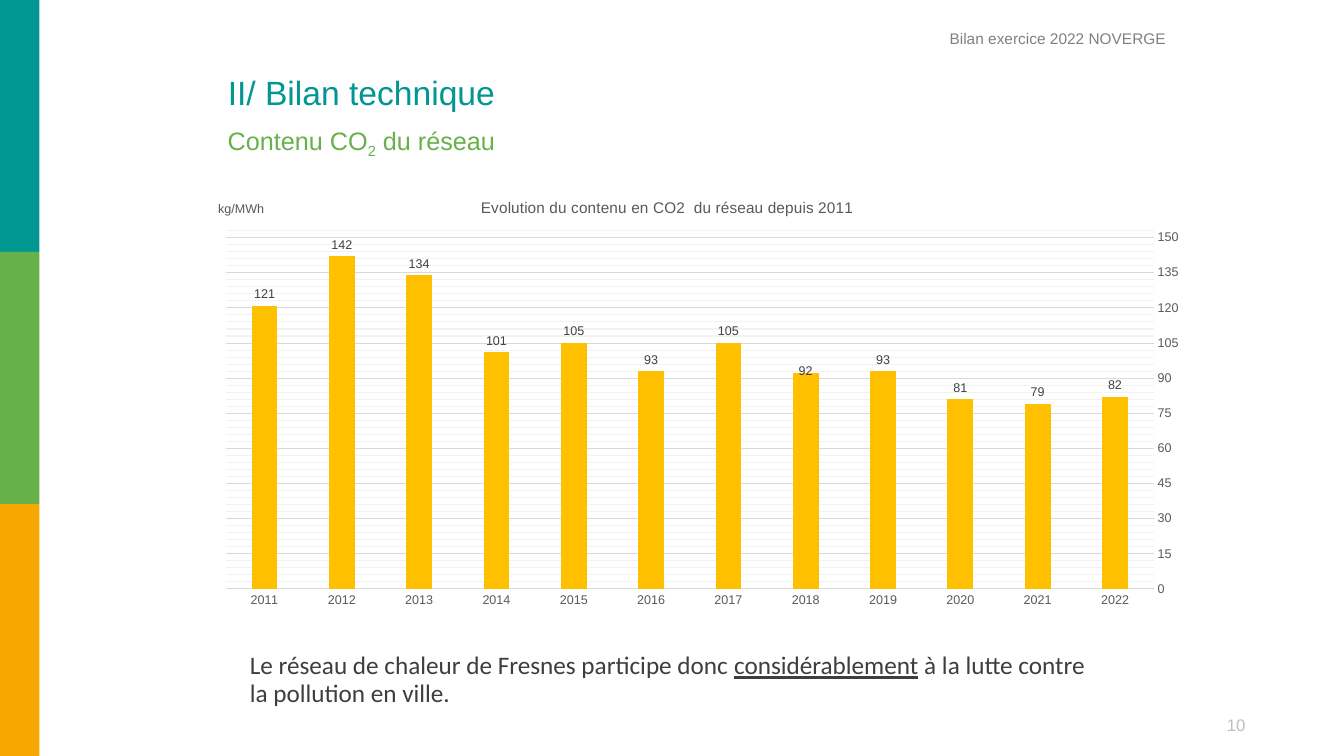
import pptx
import pptx.chart.data
import pptx.dml.color
import pptx.enum.chart
import pptx.enum.shapes
import pptx.enum.text
import pptx.oxml
import pptx.oxml.ns
import pptx.util
from pptx.util import Inches

TEAL, GREEN, ORANGE = "009793", "67B14A", "F6A800"
AMBER, GREY, LIGHT_GREY = "FFC000", "595959", "D9D9D9"
EMISSIONS = {2011: 121, 2012: 142, 2013: 134, 2014: 101, 2015: 105, 2016: 93,
             2017: 105, 2018: 92, 2019: 93, 2020: 81, 2021: 79, 2022: 82}


def color(hex_value):
    """Turn a hex string into a colour."""
    return pptx.dml.color.RGBColor.from_string(hex_value)


def set_attributes(target, values):
    """Set each named attribute of the target."""
    for name, value in values.items():
        setattr(target, name, value)


def format_font(font, size, hex_value, name="Arial"):
    """Give a font its size, colour and typeface."""
    set_attributes(font, {"size": pptx.util.Pt(size), "name": name, "bold": False})
    font.color.rgb = color(hex_value)


def format_line(line, hex_value):
    """Give a chart line its colour and a thin width."""
    line.color.rgb = color(hex_value)
    line.width = pptx.util.Pt(0.75)


def add_band(slide, top, height, hex_value):
    """Add one coloured band at the left edge."""
    shape = slide.shapes.add_shape(pptx.enum.shapes.MSO_SHAPE.RECTANGLE,
                                   0, Inches(top), Inches(0.39), Inches(height))
    shape.shadow.inherit = False
    shape.fill.solid()
    shape.fill.fore_color.rgb = color(hex_value)
    shape.line.fill.background()


def write_text(shape, runs, size, hex_value, name="Arial", align="LEFT", anchor="TOP"):
    """Write runs of text, each with its own font attributes, in one paragraph."""
    set_attributes(shape.text_frame, {
        "word_wrap": True,
        "auto_size": pptx.enum.text.MSO_AUTO_SIZE.NONE,
        "vertical_anchor": pptx.enum.text.MSO_ANCHOR[anchor],
    })
    paragraph = shape.text_frame.paragraphs[0]
    set_attributes(paragraph, {"line_spacing": 0.9,
                               "alignment": pptx.enum.text.PP_ALIGN[align]})
    for text, attributes in runs:
        run = paragraph.add_run()
        run.text = text
        format_font(run.font, size, hex_value, name)
        for attribute, value in attributes.items():
            run.font._element.set(attribute, value)


def add_text(slide, box, runs, size, hex_value, **options):
    """Add a text box with one paragraph."""
    shape = slide.shapes.add_textbox(*map(Inches, box))
    write_text(shape, runs, size, hex_value, **options)


def set_layout(parent, index, values):
    """Place a chart part by hand, as fractions of the chart."""
    for layout in parent.findall(pptx.oxml.ns.qn("c:layout")):
        parent.remove(layout)
    parts = "".join(f'<c:{tag} val="{value}"/>' for tag, value in values.items())
    parent.insert(index, pptx.oxml.parse_xml(
        f'<c:layout {pptx.oxml.ns.nsdecls("c")}>'
        f'<c:manualLayout>{parts}</c:manualLayout></c:layout>'))


def add_chart_title(owner, title, text, size, left, top):
    """Write a horizontal title on a chart or an axis and place it."""
    owner.has_title = True
    title.text_frame.text = text
    title.text_frame._txBody.bodyPr.set("rot", "0")
    title.text_frame._txBody.bodyPr.set("vert", "horz")
    format_font(title.text_frame.paragraphs[0].runs[0].font, size, GREY)
    set_layout(title._element, 1,
               {"xMode": "edge", "yMode": "edge", "x": left, "y": top})


def format_minor_gridlines(axis, hex_value):
    """Show the minor gridlines of an axis in one colour."""
    axis.has_minor_gridlines = True
    gridlines = axis._element.find(pptx.oxml.ns.qn("c:minorGridlines"))
    gridlines.append(pptx.oxml.parse_xml(
        f'<c:spPr {pptx.oxml.ns.nsdecls("c", "a")}><a:ln w="9525"><a:solidFill>'
        f'<a:srgbClr val="{hex_value}"/></a:solidFill></a:ln></c:spPr>'))


def format_axes(chart):
    """Format the year axis and the emissions axis."""
    no_tick = pptx.enum.chart.XL_TICK_MARK.NONE
    for axis in (chart.category_axis, chart.value_axis):
        set_attributes(axis, {"major_tick_mark": no_tick, "minor_tick_mark": no_tick})
        format_font(axis.tick_labels.font, 9, GREY)
    set_attributes(chart.category_axis, {
        "reverse_order": True,
        "crosses": pptx.enum.chart.XL_AXIS_CROSSES.MAXIMUM,
    })
    format_line(chart.category_axis.format.line, LIGHT_GREY)
    axis = chart.value_axis
    set_attributes(axis, {"minimum_scale": 0, "maximum_scale": 155, "major_unit": 15,
                          "minor_unit": 3, "has_major_gridlines": True})
    set_attributes(axis.tick_labels, {"number_format": "#,##0",
                                      "number_format_is_linked": False})
    axis.format.line.fill.background()
    format_line(axis.major_gridlines.format.line, LIGHT_GREY)
    format_minor_gridlines(axis, "F2F2F2")
    add_chart_title(axis, axis.axis_title, "kg/MWh", 9, 0.05, 0.05)


def format_bars(chart, years):
    """Format the bars and their value labels."""
    plot = chart.plots[0]
    set_attributes(plot, {"gap_width": 199, "vary_by_categories": False})
    outside = pptx.enum.chart.XL_LABEL_POSITION.OUTSIDE_END
    series = plot.series[0]
    series.format.fill.solid()
    series.format.fill.fore_color.rgb = color(AMBER)
    set_attributes(series.data_labels, {"show_value": True, "position": outside})
    format_font(series.data_labels.font, 9, "404040")
    label = series.points[years.index(2018)].data_label
    label.position = outside
    format_font(label.font, 9, "404040")
    set_layout(label.font._element.xpath("ancestor::c:dLbl")[0], 1, {"x": 0, "y": 0.02})


def add_emissions_chart(slide):
    """Add the column chart of emissions per year."""
    years = sorted(EMISSIONS, reverse=True)
    chart_data = pptx.chart.data.CategoryChartData(number_format="0")
    chart_data.categories = [str(year) for year in years]
    chart_data.add_series("Contenu CO2", [EMISSIONS[year] for year in years])
    chart = slide.shapes.add_chart(
        pptx.enum.chart.XL_CHART_TYPE.COLUMN_CLUSTERED,
        *map(Inches, (1.64, 1.74, 10.05, 4.56)), chart_data).chart
    chart.has_legend = False
    format_font(chart.font, 10, "000000")
    add_chart_title(chart, chart.chart_title,
                    "Evolution du contenu en CO2  du réseau depuis 2011", 11, 0.31, 0.04)
    format_axes(chart)
    format_bars(chart, years)
    plot_area = chart._chartSpace.chart.plotArea
    set_layout(plot_area, 0, {"layoutTarget": "inner", "xMode": "edge", "yMode": "edge",
                              "x": 0.06, "y": 0.11, "w": 0.92, "h": 0.79})


def main():
    """Build the slide and save it."""
    presentation = pptx.Presentation()
    set_attributes(presentation, {"slide_width": Inches(13.33),
                                  "slide_height": Inches(7.5)})
    slide = presentation.slides.add_slide(presentation.slide_layouts[5])
    for index, hex_value in enumerate((TEAL, GREEN, ORANGE)):
        add_band(slide, 2.5 * index, 2.5, hex_value)
    title = slide.shapes.title
    set_attributes(title, {"left": Inches(2.16), "top": Inches(0.74),
                           "width": Inches(7.47), "height": Inches(0.4)})
    write_text(title, [("II/ Bilan technique", {})], 24, TEAL, anchor="MIDDLE")
    add_text(slide, (2.16, 1.2, 7.02, 0.33),
             [("Contenu CO", {}), ("2", {"baseline": "-25000"}), (" du réseau", {})],
             18, GREEN)
    add_text(slide, (9.32, 0.26, 3.51, 0.22),
             [("Bilan exercice 2022 NOVERGE", {})], 11, "808080")
    add_emissions_chart(slide)
    add_text(slide, (2.38, 6.43, 8.56, 0.65),
             [("Le réseau de chaleur de Fresnes participe donc ", {}),
              ("considérablement", {"u": "sng"}),
              (" à la lutte contre la pollution en ville.", {})],
             18, "3E3E3E", name="Calibri")
    add_text(slide, (11.99, 7.05, 0.54, 0.3), [("10", {})], 12, "BFBFBF",
             align="CENTER", anchor="MIDDLE")
    presentation.save("out.pptx")


if __name__ == "__main__":
    main()
